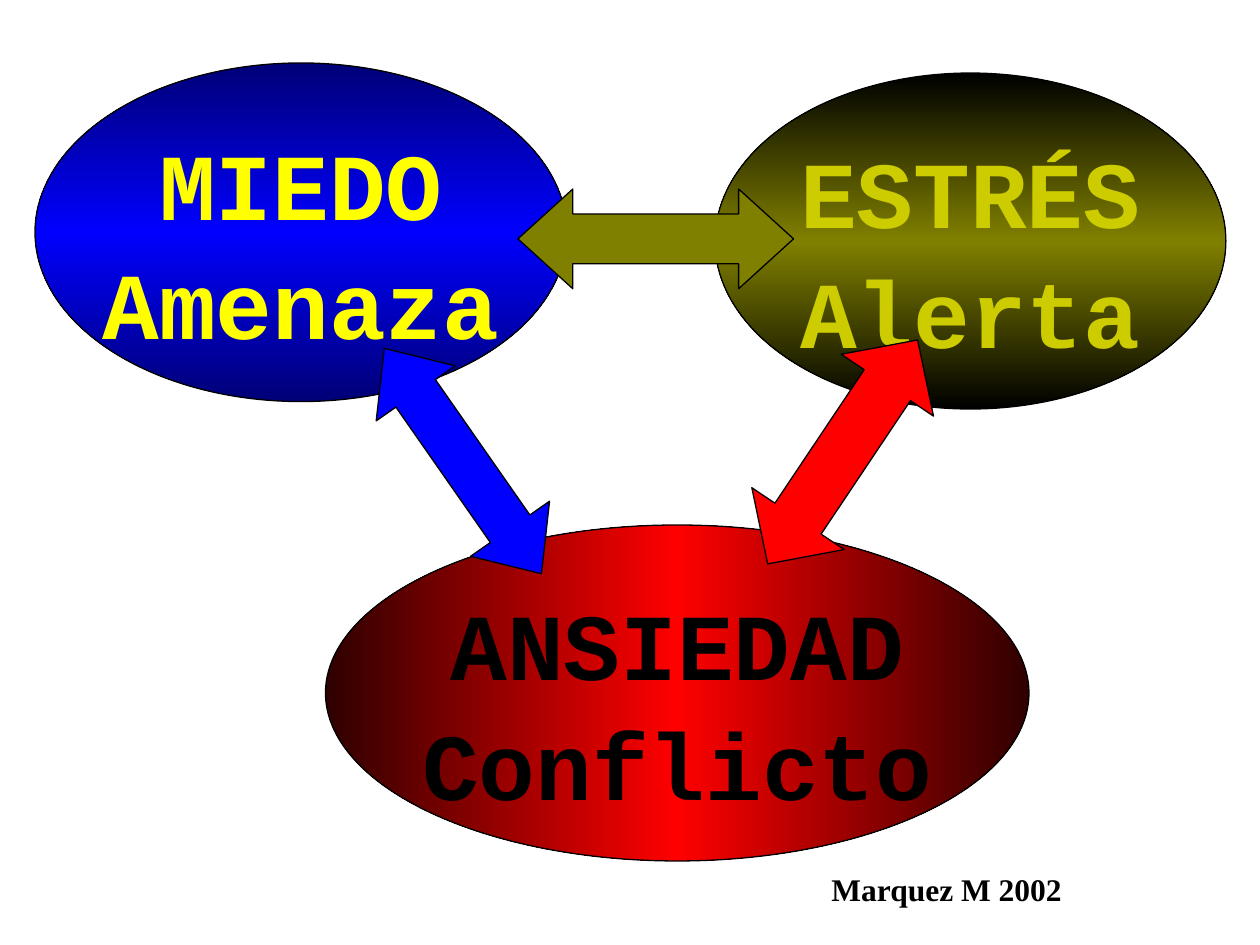
from copy import deepcopy
from dataclasses import dataclass

from pptx import Presentation
from pptx.dml.color import RGBColor
from pptx.enum.shapes import MSO_SHAPE
from pptx.enum.text import MSO_ANCHOR, MSO_AUTO_SIZE, PP_ALIGN
from pptx.util import Pt


@dataclass(frozen=True)
class Theme:
    """Colours, fonts and type sizes of the slide."""

    black: str = "000000"
    blue: str = "0000FF"
    navy: str = "000076"
    olive: str = "808000"
    red: str = "FF0000"
    maroon: str = "2F0000"
    yellow: str = "FFFF00"
    mustard: str = "CCCC00"
    concept_font: str = "Courier New"
    credit_font: str = "Times New Roman"
    concept_size: int = 54
    credit_size: int = 18
    outline: float = 0.75


THEME = Theme()


def write_lines(shape, lines, font_name, size, color, alignment):
    """Write one bold paragraph per line and return the text frame."""
    text_frame = shape.text_frame
    text_frame.word_wrap = False
    text_frame.text = "\n".join(lines)
    for paragraph in text_frame.paragraphs:
        paragraph.alignment = alignment
        font = paragraph.runs[0].font
        font.name, font.size, font.bold = font_name, Pt(size), True
        font.color.rgb = RGBColor.from_string(color)
    return text_frame


def add_outlined_shape(slide, kind, box):
    """Add a preset shape with a thin black outline and no shadow."""
    shape = slide.shapes.add_shape(kind, *map(Pt, box))
    shape.shadow.inherit = False
    shape.line.color.rgb = RGBColor.from_string(THEME.black)
    shape.line.width = Pt(THEME.outline)
    return shape


def fill_mirrored_gradient(shape, edge, middle, angle):
    """Fill a shape with a gradient running from edge to middle to edge."""
    shape.fill.gradient()
    shape.fill.gradient_angle = angle
    first_stop = shape.element.spPr.xpath("./a:gradFill/a:gsLst/a:gs")[0]
    first_stop.addnext(deepcopy(first_stop))
    stops = zip(shape.fill.gradient_stops, (0, 0.5, 1), (edge, middle, edge))
    for stop, position, color in stops:
        stop.position = position
        stop.color.rgb = RGBColor.from_string(color)


def add_concept(slide, box, lines, text_color, edge, middle, angle):
    """Add an ellipse that names a concept and its trigger."""
    ellipse = add_outlined_shape(slide, MSO_SHAPE.OVAL, box)
    fill_mirrored_gradient(ellipse, edge, middle, angle)
    text_frame = write_lines(ellipse, lines, THEME.concept_font,
                             THEME.concept_size, text_color, PP_ALIGN.CENTER)
    text_frame.vertical_anchor = MSO_ANCHOR.MIDDLE
    text_frame.margin_top, text_frame.margin_bottom = Pt(11), Pt(0)
    for paragraph in text_frame.paragraphs:
        paragraph.space_before = Pt(3.4)


def add_double_arrow(slide, box, rotation, head, color):
    """Add a two-way arrow between two concepts."""
    arrow = add_outlined_shape(slide, MSO_SHAPE.LEFT_RIGHT_ARROW, box)
    arrow.rotation = rotation
    arrow.adjustments[0], arrow.adjustments[1] = 0.5, head
    arrow.fill.solid()
    arrow.fill.fore_color.rgb = RGBColor.from_string(color)


def add_credit(slide, box, text):
    """Add the author and year."""
    credit = slide.shapes.add_textbox(*map(Pt, box))
    text_frame = write_lines(credit, [text], THEME.credit_font,
                             THEME.credit_size, THEME.black, PP_ALIGN.LEFT)
    text_frame.auto_size = MSO_AUTO_SIZE.SHAPE_TO_FIT_TEXT


def main():
    """Build and save the slide."""
    presentation = Presentation()
    presentation.slide_width, presentation.slide_height = Pt(720), Pt(540)
    slide = presentation.slides.add_slide(presentation.slide_layouts[6])

    add_concept(slide, (20, 36, 304, 193.5), ["MIEDO", "Amenaza"],
                THEME.yellow, THEME.navy, THEME.blue, 90)
    add_concept(slide, (408.5, 41.75, 292, 192), ["ESTRÉS", "Alerta"],
                THEME.mustard, THEME.black, THEME.olive, 90)
    add_concept(slide, (186, 300, 402, 192), ["ANSIEDAD", "Conflicto"],
                THEME.black, THEME.maroon, THEME.red, 0)

    add_double_arrow(slide, (296, 108, 157.5, 57), 0, 0.55, THEME.olive)
    add_double_arrow(slide, (404.5, 226.5, 154, 63.5), 123.8, 0.49, THEME.red)
    add_double_arrow(slide, (186, 236, 157, 55), 55.1, 0.57, THEME.blue)

    add_credit(slide, (468, 493.5, 146, 29), "Marquez M 2002")
    presentation.save("out.pptx")


if __name__ == "__main__":
    main()
